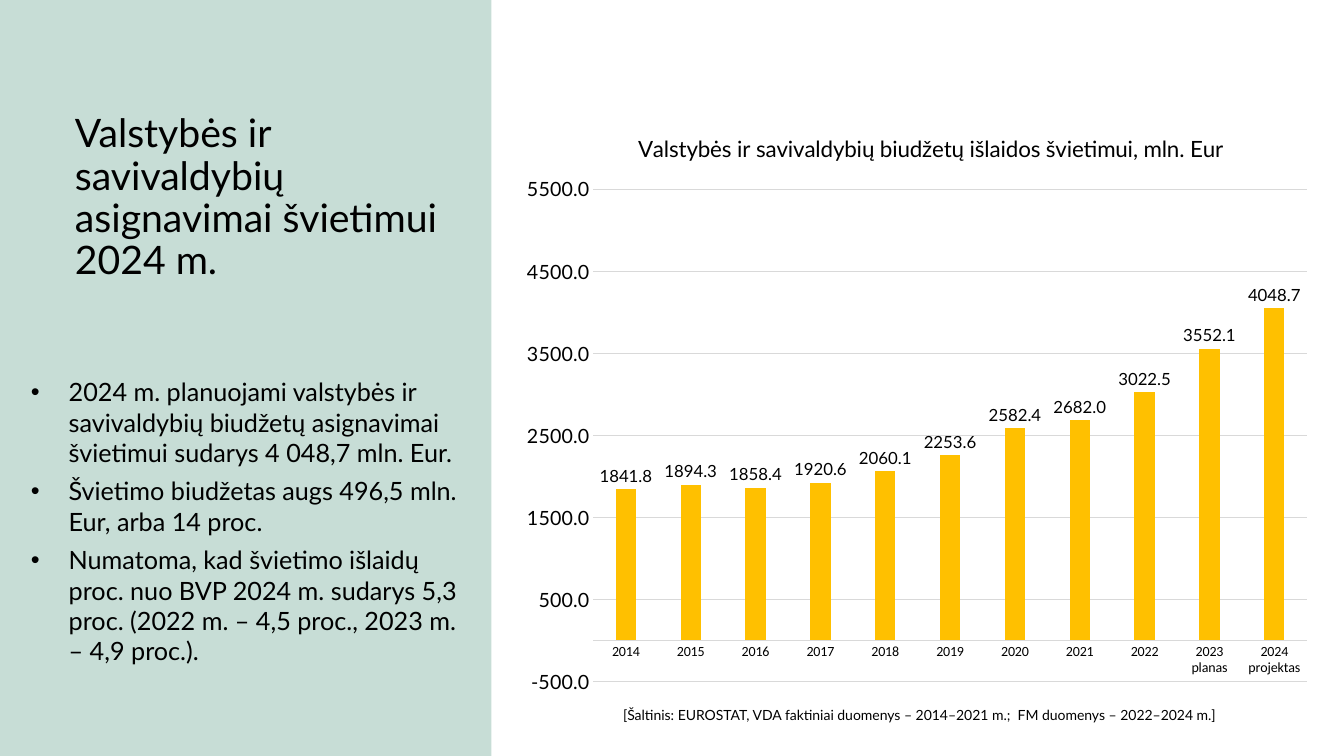
from lxml import etree
from pptx import Presentation, util as u
from pptx.chart.data import CategoryChartData
from pptx.dml.color import RGBColor
from pptx.enum import chart as ch, shapes, text
from pptx.oxml import parse_xml
from pptx.oxml.ns import nsdecls, qn

MINT = RGBColor(0xC7, 0xDD, 0xD6)
AMBER = RGBColor(0xFF, 0xC0, 0x00)
GREY = RGBColor(0xD9, 0xD9, 0xD9)
BLACK = RGBColor(0, 0, 0)

TITLE = "Valstybės ir savivaldybių asignavimai švietimui 2024 m."
POINTS = [
    "2024 m. planuojami valstybės ir savivaldybių biudžetų asignavimai "
    "švietimui sudarys 4 048,7 mln. Eur.",
    "Švietimo biudžetas augs 496,5 mln. Eur, arba 14 proc.",
    "Numatoma, kad švietimo išlaidų proc. nuo BVP 2024 m. sudarys 5,3 proc. "
    "(2022 m. – 4,5 proc., 2023 m. – 4,9 proc.).",
]
CHART_TITLE = "Valstybės ir savivaldybių biudžetų išlaidos švietimui, mln. Eur"
YEARS = [str(y) for y in range(2014, 2023)] + ["2023 planas", "2024 projektas"]
SPENDING = [1841.8, 1894.3, 1858.4, 1920.6, 2060.1, 2253.6,
            2582.4, 2682.0, 3022.5, 3552.1, 4048.7]
SOURCE = ("[Šaltinis: EUROSTAT, VDA faktiniai duomenys – 2014–2021 m.;  "
          "FM duomenys – 2022–2024 m.]")


def px(n):
    return u.Emu(n * 9525)


class Deck:
    font = "Lato"

    def __init__(self, width, height):
        self.prs = Presentation()
        self.prs.slide_width, self.prs.slide_height = px(width), px(height)
        self.s = self.prs.slides.add_slide(self.prs.slide_layouts[6])

    def style(self, font, size, name=None):
        font.name, font.size = name or self.font, u.Pt(size)
        font.bold = False
        font.color.rgb = BLACK

    def rect(self, box, color):
        sp = self.s.shapes.add_shape(shapes.MSO_SHAPE.RECTANGLE, *map(px, box))
        sp.shadow.inherit = False
        sp.fill.solid()
        sp.fill.fore_color.rgb = color
        sp.line.fill.background()

    def text(self, box, lines, size, anchor=text.MSO_ANCHOR.TOP,
             spacing=None, after=0, indent=0):
        """Add a text box; a non-zero indent makes its lines bulleted."""
        tf = self.s.shapes.add_textbox(*map(px, box)).text_frame
        tf.word_wrap = True
        tf.vertical_anchor = anchor
        for i, line in enumerate(lines):
            p = tf.paragraphs[0] if i == 0 else tf.add_paragraph()
            p.text = line
            p.line_spacing = spacing
            p.space_after = u.Pt(after)
            self.style(p.font, size)
            if indent:
                self.bullet(p, indent)

    def bullet(self, p, indent):
        pPr = p._p.get_or_add_pPr()
        pPr.set("marL", str(px(indent)))
        pPr.set("indent", str(-px(indent)))
        for tag, key, value in (("a:buFont", "typeface", "Arial"),
                                ("a:buChar", "char", "•")):
            bu = etree.Element(qn(tag))
            bu.set(key, value)
            pPr.insert_element_before(bu, "a:tabLst", "a:defRPr", "a:extLst")

    def place(self, parent, tag, **fractions):
        """Fix the place of a chart part, in fractions of the chart."""
        for old in parent.findall(qn("c:layout")):
            parent.remove(old)
        target = '<c:layoutTarget val="inner"/>' if "w" in fractions else ""
        modes = "".join(f'<c:{k}Mode val="edge"/>' for k in "xy")
        values = "".join(f'<c:{k} val="{v}"/>' for k, v in fractions.items())
        layout = parse_xml(f'<c:layout {nsdecls("c")}><c:manualLayout>{target}'
                           f'{modes}{values}</c:manualLayout></c:layout>')
        before = parent.find(qn(tag)) if tag else None
        parent.insert(0 if before is None else parent.index(before) + 1, layout)

    def columns(self, box, title, cats, values):
        data = CategoryChartData(number_format="0.0")
        data.categories = cats
        data.add_series("Series 1", values)
        chart = self.s.shapes.add_chart(
            ch.XL_CHART_TYPE.COLUMN_CLUSTERED, *map(px, box), data).chart
        self.style(chart.font, 14, "Calibri")
        chart.has_legend = False
        tf = chart.chart_title.text_frame
        tf.text = title
        self.style(tf.paragraphs[0].font, 16)

        plot = chart.plots[0]
        plot.vary_by_categories = False
        plot.gap_width, plot.overlap = 219, -27
        fill = plot.series[0].format.fill
        fill.solid()
        fill.fore_color.rgb = AMBER
        plot.has_data_labels = True
        labels = plot.data_labels
        labels.show_value = True
        labels.position = ch.XL_LABEL_POSITION.OUTSIDE_END
        labels.number_format, labels.number_format_is_linked = "0.0", False
        self.style(labels.font, 12)

        cat, val = chart.category_axis, chart.value_axis
        for axis in (cat, val):
            axis.major_tick_mark = axis.minor_tick_mark = ch.XL_TICK_MARK.NONE
        self.style(cat.tick_labels.font, 10, "Calibri")
        self.style(val.tick_labels.font, 14)
        val.minimum_scale, val.maximum_scale, val.major_unit = -500, 5500, 1000
        val.tick_labels.number_format = "0.0"
        val.tick_labels.number_format_is_linked = False
        val.format.line.fill.background()
        for line in (cat.format.line, val.major_gridlines.format.line):
            line.color.rgb = GREY
            line.width = u.Pt(0.75)

        root = chart._chartSpace.chart
        self.place(root.find(qn("c:title")), "c:tx", x=0.15, y=0.04)
        self.place(root.plotArea, None, x=0.1, y=0.14, w=0.88, h=0.82)


def main():
    d = Deck(1280, 720)
    d.rect((0, 0, 468, 720), MINT)
    d.text((62, 101, 388, 176), [TITLE], 28,
           anchor=text.MSO_ANCHOR.MIDDLE, spacing=0.9)
    d.text((20, 354, 436, 288), POINTS, 18, after=6, indent=36)
    d.columns((488, 100, 772, 572), CHART_TITLE, YEARS, SPENDING)
    d.text((584, 668, 688, 26), [SOURCE], 10)
    d.prs.save("out.pptx")


if __name__ == "__main__":
    main()
